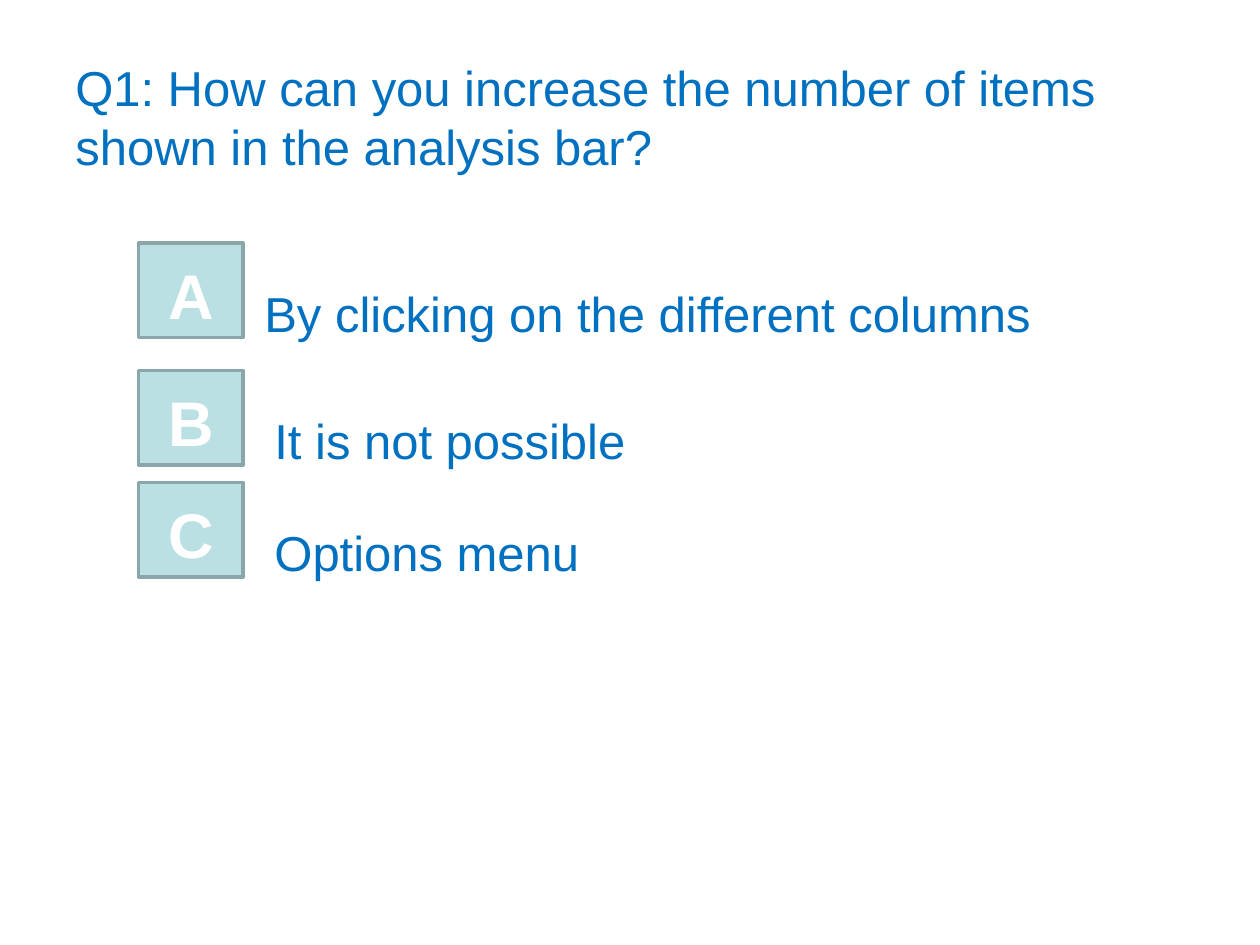
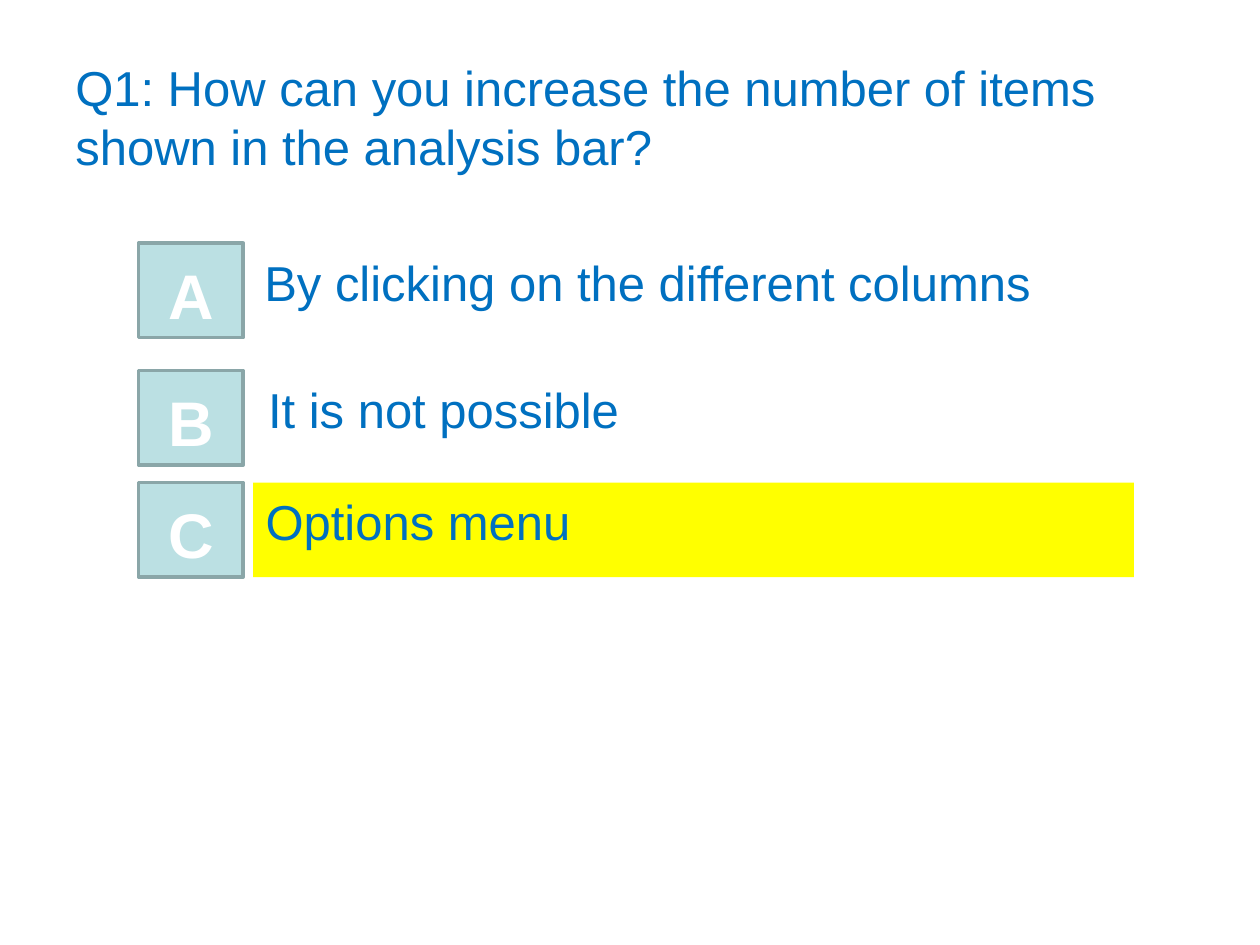
from pptx import Presentation
from pptx.dml.color import RGBColor
from pptx.enum.shapes import MSO_SHAPE as Shape
from pptx.enum.text import MSO_ANCHOR as Anchor, PP_ALIGN as Align
from pptx.util import Inches, Pt

BLUE = RGBColor(0x00, 0x70, 0xC0)
WHITE = RGBColor(0xFF, 0xFF, 0xFF)
BADGE_FILL = RGBColor(0xBB, 0xE0, 0xE3)
BADGE_EDGE = RGBColor(0x8A, 0xA6, 0xA8)
YELLOW = RGBColor(0xFF, 0xFF, 0x00)

BODY_FONT = {"name": "Arial", "size": Pt(28), "bold": False}
BADGE_FONT = {"name": "Arial", "size": Pt(36), "bold": True}

QUESTION = "Q1: How can you increase the number of items shown in the analysis bar?"
ANSWERS = ["By clicking on the different columns", "It is not possible", "Options menu"]

# Rows of the answer grid and the column of letter badges
ROW_TOPS = [1.93, 2.94, 3.83]
ROW_HEIGHT = 0.75
BADGE_LEFT, BADGE_WIDTH = 1.1, 0.83

# Per slide: answer columns (left, width), drop below the row top, highlighted answer
SLIDES = [
    {"columns": [(2, 7.08), (2.08, 5.76), (2.08, 5.92)], "drop": 0.25, "correct": None},
    {"columns": [(2, 7.17), (2.03, 6.83), (2.01, 6.99)], "drop": 0, "correct": 2},
]


def write(box, text, font, color, anchor=Anchor.TOP, align=Align.LEFT, inset_top=0.05):
    frame = box.text_frame
    frame.word_wrap = True
    frame.vertical_anchor = anchor
    frame.margin_top = Inches(inset_top)
    paragraph = frame.paragraphs[0]
    paragraph.text = text
    paragraph.alignment = align
    for key, value in font.items():
        setattr(paragraph.font, key, value)
    paragraph.font.color.rgb = color


deck = Presentation()
deck.slide_width, deck.slide_height = Inches(10), Inches(7.5)

for plan in SLIDES:
    slide = deck.slides.add_slide(deck.slide_layouts[6])
    shapes = slide.shapes

    # Question
    question = shapes.add_textbox(Inches(0.5), Inches(0.3), Inches(9), Inches(1.25))
    write(question, QUESTION, BODY_FONT, BLUE, Anchor.MIDDLE)

    for row, (answer, top, (left, width)) in enumerate(zip(ANSWERS, ROW_TOPS, plan["columns"])):
        # Answer, on a yellow bar when it is the correct one
        area = [Inches(n) for n in (left, top + plan["drop"], width, ROW_HEIGHT)]
        if row == plan["correct"]:
            choice = shapes.add_shape(Shape.RECTANGLE, *area)
            choice.shadow.inherit = False
            choice.fill.solid()
            choice.fill.fore_color.rgb = YELLOW
            choice.line.fill.background()
        else:
            choice = shapes.add_textbox(*area)
        write(choice, answer, BODY_FONT, BLUE, inset_top=0.07)

        # Letter badge
        badge = shapes.add_shape(Shape.ACTION_BUTTON_CUSTOM, Inches(BADGE_LEFT), Inches(top),
                                 Inches(BADGE_WIDTH), Inches(ROW_HEIGHT))
        badge.shadow.inherit = False
        badge.fill.solid()
        badge.fill.fore_color.rgb = BADGE_FILL
        badge.line.color.rgb = BADGE_EDGE
        badge.line.width = Pt(2)
        write(badge, "ABC"[row], BADGE_FONT, WHITE, Anchor.MIDDLE, Align.CENTER, 0.11)

deck.save("out.pptx")
